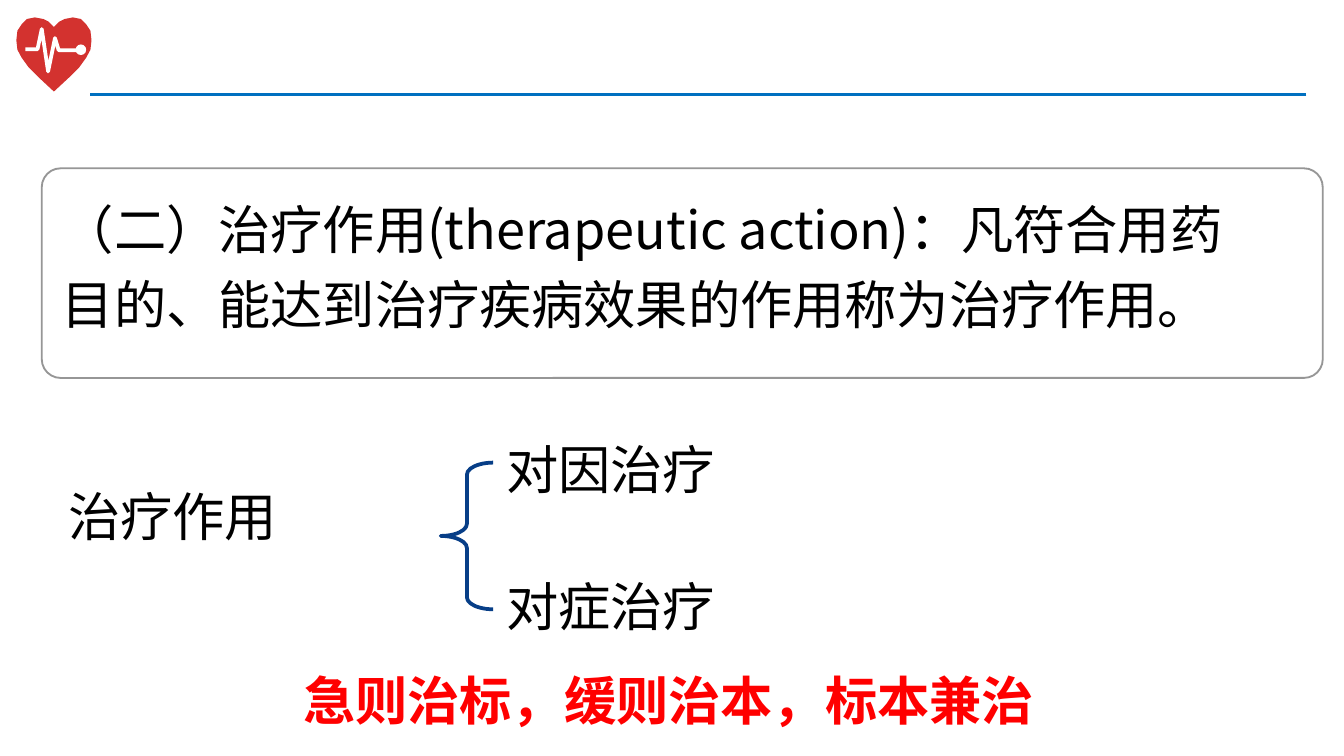
from pptx import Presentation
from pptx.dml.color import RGBColor
from pptx.enum.shapes import MSO_CONNECTOR, MSO_SHAPE
from pptx.enum.text import PP_ALIGN
from pptx.oxml.ns import qn
from pptx.util import Cm, Pt

COLORS = {
    "rule": "0070C0",
    "heart": "D3322F",
    "pulse": "FFFFFF",
    "frame": "969696",
    "brace": "073E87",
    "text": "000000",
    "motto": "FF0000",
}
CJK_FONT = "Noto Sans CJK SC"

# Right half of the heart, from notch to tip: distance from the axis, height (cm)
HEART_AXIS = 1.02
HEART_HALF = [
    (0, 0.51), (0.1, 0.41), (0.2, 0.36), (0.36, 0.33), (0.51, 0.36),
    (0.61, 0.46), (0.69, 0.58), (0.71, 0.76), (0.69, 0.94), (0.61, 1.09),
    (0.48, 1.27), (0.28, 1.47), (0, 1.73),
]
PULSE = [(0.48, 0.93), (0.71, 0.93), (0.79, 0.55), (0.91, 1.35),
         (1.04, 0.72), (1.11, 0.95), (1.47, 0.95)]


def rgb(name):
    return RGBColor.from_string(COLORS[name])


def style(sp, fill=None, line=None, weight=1):
    sp.shadow.inherit = False
    if fill:
        sp.fill.solid()
        sp.fill.fore_color.rgb = rgb(fill)
    else:
        sp.fill.background()
    if line:
        sp.line.color.rgb = rgb(line)
        sp.line.width = Pt(weight)
    else:
        sp.line.fill.background()


def add_preset(s, kind, left, top, width, height, **look):
    sp = s.shapes.add_shape(kind, Cm(left), Cm(top), Cm(width), Cm(height))
    style(sp, **look)
    return sp


def add_outline(s, points, close, **look):
    pts = [(Cm(x), Cm(y)) for x, y in points]
    builder = s.shapes.build_freeform(*pts[0])
    builder.add_line_segments(pts[1:], close=close)
    style(builder.convert_to_shape(), **look)


def add_rule(s, x1, x2, y):
    line = s.shapes.add_connector(MSO_CONNECTOR.STRAIGHT, Cm(x1), Cm(y), Cm(x2), Cm(y))
    line.line.color.rgb = rgb("rule")
    line.line.width = Pt(1.5)
    sp_pr = line._element.spPr
    sp_pr.append(sp_pr.makeelement(qn("a:effectLst"), {}))


def add_heart(s):
    right = [(HEART_AXIS + dx, y) for dx, y in HEART_HALF]
    left = [(HEART_AXIS - dx, y) for dx, y in HEART_HALF[-2:0:-1]]
    add_outline(s, right + left, True, fill="heart")
    add_outline(s, PULSE, False, line="pulse", weight=2)
    add_preset(s, MSO_SHAPE.OVAL, 1.43, 0.84, 0.2, 0.2, fill="pulse")


def add_text(s, text, left, top, width, height, color="text", font=CJK_FONT, bold=False):
    tf = s.shapes.add_textbox(Cm(left), Cm(top), Cm(width), Cm(height)).text_frame
    tf.word_wrap = True
    tf.text = text
    for r in tf.paragraphs[0].runs:
        r.font.size = Pt(28)
        r.font.bold = bold
        r.font.name = font
        r.font.color.rgb = rgb(color)
        r_pr = r._r.get_or_add_rPr()
        ea = r_pr.makeelement(qn("a:ea"), {"typeface": CJK_FONT})
        r_pr.find(qn("a:latin")).addnext(ea)
    return tf


def add_definition(s):
    frame = add_preset(s, MSO_SHAPE.ROUNDED_RECTANGLE, 0.79, 3.18, 24.21, 3.96, line="frame")
    frame.adjustments[0] = 0.09
    tf = add_text(
        s,
        "（二）治疗作用(therapeutic action)：凡符合用药目的、能达到治疗疾病效果的作用称为治疗作用。",
        0.99, 3.38, 23.22, 3.07,
    )
    tf.margin_left = tf.margin_right = Cm(0.18)
    tf.margin_top = tf.margin_bottom = Cm(0.1)
    tf.paragraphs[0].line_spacing = 1.2


def add_branches(s):
    add_text(s, "治疗作用", 1.04, 9.02, 7, 1.9)
    for text, top in (("对因治疗", 8.13), ("对症治疗", 10.72)):
        add_text(s, text, 9.32, top, 12, 1.9)
    brace = add_preset(s, MSO_SHAPE.LEFT_BRACE, 8.33, 8.74, 0.99, 2.77, line="brace", weight=2)
    brace.adjustments[0] = 0.23


def main():
    prs = Presentation()
    prs.slide_width, prs.slide_height = Cm(25.4), Cm(14.28)
    s = prs.slides.add_slide(prs.slide_layouts[6])
    add_rule(s, 24.69, 1.7, 1.78)
    add_heart(s)
    add_definition(s)
    add_branches(s)
    motto = add_text(s, "急则治标，缓则治本，标本兼治", 5.23, 12.5, 14.81, 1.45,
                     color="motto", font="Arial", bold=True)
    motto.paragraphs[0].alignment = PP_ALIGN.CENTER
    prs.save("out.pptx")


if __name__ == "__main__":
    main()
